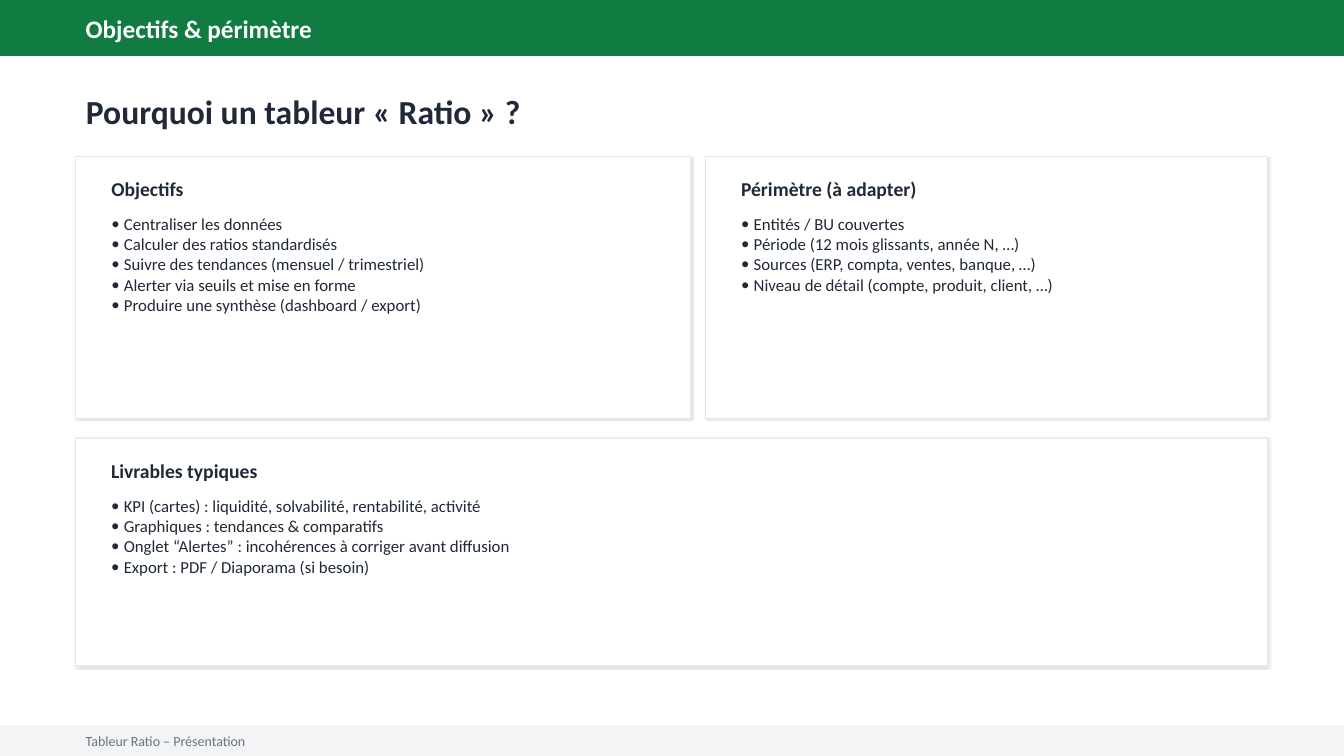
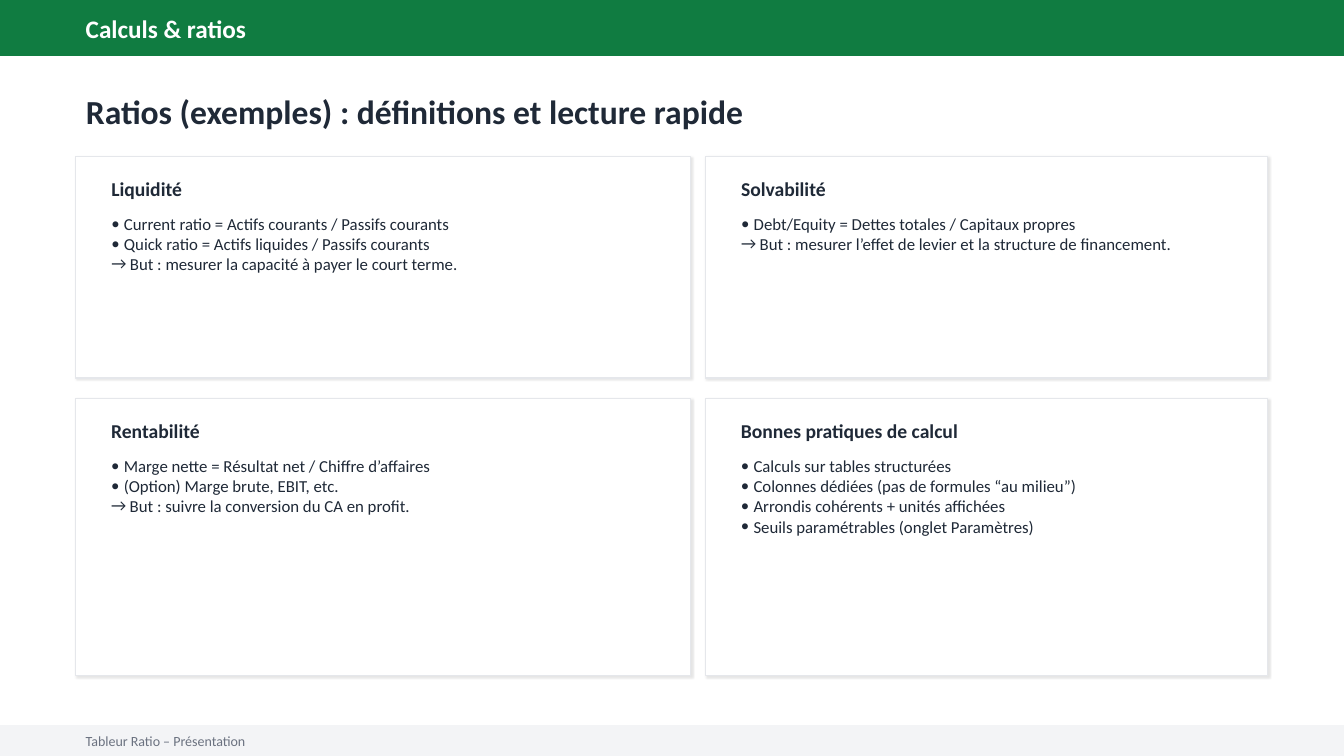
from lxml import etree
from pptx import Presentation
from pptx import util as u
from pptx.dml import color
from pptx.enum import shapes, text
from pptx.oxml import ns

GREEN, WHITE, INK = "107C41", "FFFFFF", "1F2937"
PALE, GREY, BORDER = "F3F4F6", "6B7280", "E5E7EB"
WIDTH, HEIGHT = 33.87, 19.05
MARGIN, CARDS_TOP, ROW_GAP = 1.91, 3.94, 0.51
FULL_WIDTH = [(MARGIN, 30.05)]
TWO_COLUMNS = [(MARGIN, 15.49), (17.78, 14.17)]
COMPARISON_LAYOUT = 4

SLIDES = [
    ("Objectifs & périmètre", "Pourquoi un tableur « Ratio » ?", [
        (6.6, TWO_COLUMNS, [
            ("Objectifs", [
                "• Centraliser les données",
                "• Calculer des ratios standardisés",
                "• Suivre des tendances (mensuel / trimestriel)",
                "• Alerter via seuils et mise en forme",
                "• Produire une synthèse (dashboard / export)"]),
            ("Périmètre (à adapter)", [
                "• Entités / BU couvertes",
                "• Période (12 mois glissants, année N, …)",
                "• Sources (ERP, compta, ventes, banque, …)",
                "• Niveau de détail (compte, produit, client, …)"])]),
        (5.72, FULL_WIDTH, [
            ("Livrables typiques", [
                "• KPI (cartes) : liquidité, solvabilité, rentabilité, activité",
                "• Graphiques : tendances & comparatifs",
                "• Onglet “Alertes” : incohérences à corriger avant diffusion",
                "• Export : PDF / Diaporama (si besoin)"])]),
    ]),
    ("Calculs & ratios", "Ratios (exemples) : définitions et lecture rapide", [
        (5.59, TWO_COLUMNS, [
            ("Liquidité", [
                "• Current ratio = Actifs courants / Passifs courants",
                "• Quick ratio = Actifs liquides / Passifs courants",
                "→ But : mesurer la capacité à payer le court terme."]),
            ("Solvabilité", [
                "• Debt/Equity = Dettes totales / Capitaux propres",
                "→ But : mesurer l’effet de levier et la structure de financement."])]),
        (6.99, TWO_COLUMNS, [
            ("Rentabilité", [
                "• Marge nette = Résultat net / Chiffre d’affaires",
                "• (Option) Marge brute, EBIT, etc.",
                "→ But : suivre la conversion du CA en profit."]),
            ("Bonnes pratiques de calcul", [
                "• Calculs sur tables structurées",
                "• Colonnes dédiées (pas de formules “au milieu”)",
                "• Arrondis cohérents + unités affichées",
                "• Seuils paramétrables (onglet Paramètres)"])]),
    ]),
]


def paint(color_format, value):
    color_format.rgb = color.RGBColor.from_string(value)


class Deck:
    """Holds the presentation style and the slide being filled."""

    font_name = "Calibri"
    bullet_indent = {"•": 0.32, "→": 0.47}

    def __init__(self):
        self.presentation = Presentation()
        self.presentation.slide_width = u.Cm(WIDTH)
        self.presentation.slide_height = u.Cm(HEIGHT)

    def start_slide(self, section, title):
        layout = self.presentation.slide_layouts[COMPARISON_LAYOUT]
        self.slide = self.presentation.slides.add_slide(layout)
        title_holder, *self.holders = self.slide.placeholders
        self.rectangle(0, 0, WIDTH, 1.4, GREEN, GREEN)
        self.label(section, (MARGIN, 0.36, 30.48, 0.71), 18, WHITE, True)
        self.rectangle(0, 18.29, WIDTH, 0.76, PALE, PALE)
        self.label("Tableur Ratio – Présentation", (MARGIN, 18.39, 30.48, 0.56), 10, GREY)
        self.label(title, (MARGIN, 2.29, 30.48, 1.02), 24, INK, True, title_holder)

    def rectangle(self, left, top, width, height, fill, line):
        shape = self.slide.shapes.add_shape(
            shapes.MSO_SHAPE.RECTANGLE, *map(u.Cm, (left, top, width, height)))
        shape.shadow.inherit = False
        shape.fill.solid()
        paint(shape.fill.fore_color, fill)
        paint(shape.line.color, line)
        shape.line.width = u.Pt(1)
        return shape

    def cast_shadow(self, shape):
        effects = shape.element.spPr.find(ns.qn("a:effectLst"))
        shadow = etree.SubElement(
            effects, ns.qn("a:outerShdw"), blurRad=str(u.Pt(1.5)), dist=str(u.Pt(1)),
            dir="2700000", algn="tl", rotWithShape="0")
        tint = etree.SubElement(shadow, ns.qn("a:srgbClr"), val="000000")
        etree.SubElement(tint, ns.qn("a:alpha"), val="10000")

    def next_holder(self):
        return self.holders.pop(0) if self.holders else None

    def text_frame(self, box, anchor, holder):
        position = [u.Cm(length) for length in box]
        if holder is None:
            holder = self.slide.shapes.add_textbox(*position)
        else:
            holder.left, holder.top, holder.width, holder.height = position
            self.slide.shapes.element.append(holder.element)
        frame = holder.text_frame
        frame.word_wrap = True
        frame.auto_size = text.MSO_AUTO_SIZE.NONE
        frame.vertical_anchor = anchor
        return frame

    def add_words(self, paragraph, words, size, ink, bold=False):
        paragraph.alignment = text.PP_ALIGN.LEFT
        paragraph.space_before = u.Pt(0)
        run = paragraph.add_run()
        run.text = words
        run.font.name = self.font_name
        run.font.size = u.Pt(size)
        run.font.bold = bold
        paint(run.font.color, ink)

    def label(self, words, box, size, ink, bold=False, holder=None):
        frame = self.text_frame(box, text.MSO_ANCHOR.MIDDLE, holder)
        self.add_words(frame.paragraphs[0], words, size, ink, bold)

    def bullet_list(self, items, box, holder):
        frame = self.text_frame(box, text.MSO_ANCHOR.TOP, holder)
        for index, item in enumerate(items):
            paragraph = frame.add_paragraph() if index else frame.paragraphs[0]
            mark, words = item.split(" ", 1)
            indent = u.Cm(self.bullet_indent[mark])
            properties = paragraph._p.get_or_add_pPr()
            properties.set("marL", str(indent))
            properties.set("indent", str(-indent))
            etree.SubElement(properties, ns.qn("a:buFont"), typeface=self.font_name)
            etree.SubElement(properties, ns.qn("a:buChar"), char=mark)
            self.add_words(paragraph, words, 12, INK)

    def card(self, left, top, width, height, heading, items):
        self.cast_shadow(self.rectangle(left, top, width, height, WHITE, BORDER))
        text_left, text_width = left + 0.64, width - 1.27
        self.label(heading, (text_left, top + 0.46, text_width, 0.71), 14, INK, True,
                   self.next_holder())
        self.bullet_list(items, (text_left, top + 1.32, text_width, height - 1.9),
                         self.next_holder())


def main():
    deck = Deck()
    for section, title, rows in SLIDES:
        deck.start_slide(section, title)
        top = CARDS_TOP
        for height, columns, cards in rows:
            for (left, width), (heading, items) in zip(columns, cards):
                deck.card(left, top, width, height, heading, items)
            top += height + ROW_GAP
    deck.presentation.save("out.pptx")


if __name__ == "__main__":
    main()
